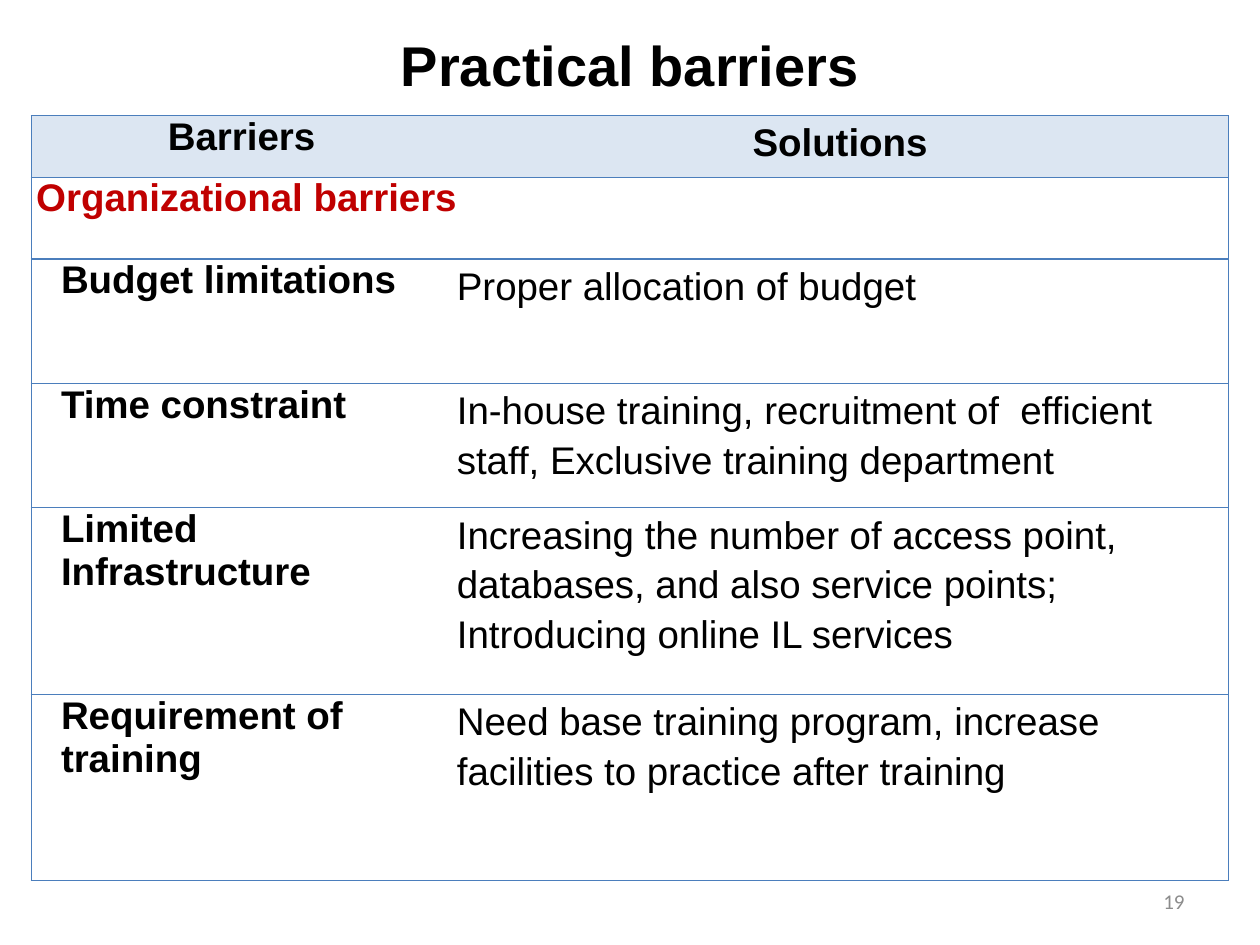
"""Build the slide on practical barriers and their solutions."""
from dataclasses import dataclass

from lxml import etree
from pptx import Presentation
from pptx import util as u
from pptx.dml.color import RGBColor
from pptx.enum import text
from pptx.oxml.ns import qn


@dataclass(frozen=True)
class Theme:
    font: str = "Arial"
    note: str = "Calibri"
    ink: str = "000000"
    red: str = "C00000"
    gray: str = "8C8C8C"
    head: str = "DCE6F2"
    rule: str = "4B7EBC"
    big: int = 32
    body: int = 22
    small: int = 12


T = Theme()
MID = text.PP_ALIGN.CENTER
WIDE = 1.15
COLS = [8.48, 15.65]
HIGH = [1.24, 1.65, 2.51, 2.51, 3.76, 3.76]
PAIRS = [
    ("Budget limitations", "Proper allocation of budget"),
    ("Time constraint",
     "In-house training, recruitment of  efficient staff, "
     "Exclusive training department"),
    ("Limited Infrastructure",
     "Increasing the number of access point, databases, and also "
     "service points; Introducing online IL services"),
    ("Requirement of training",
     "Need base training program, increase facilities to practice "
     "after training"),
]


def write(frame, words, size=T.body, color=T.ink, font=T.font, bold=False,
          align=text.PP_ALIGN.LEFT, space=1.0, indent=0):
    frame.word_wrap = True
    para = frame.paragraphs[0]
    para.alignment = align
    para.line_spacing = space
    para._p.get_or_add_pPr().set("marL", str(u.Cm(indent)))
    run = para.add_run()
    run.text = words
    run.font.size = u.Pt(size)
    run.font.name = font
    run.font.bold = bold
    run.font.color.rgb = RGBColor.from_string(color)


def place(shape, left, top, width, height):
    shape.left, shape.top = u.Cm(left), u.Cm(top)
    shape.width, shape.height = u.Cm(width), u.Cm(height)


def edge(cell, sides):
    props = cell._tc.get_or_add_tcPr()
    for spot, side in enumerate("LRTB"):
        line = etree.Element(qn(f"a:ln{side}"), w=str(u.Pt(0.75)))
        if side in sides:
            fill = etree.SubElement(line, qn("a:solidFill"))
            etree.SubElement(fill, qn("a:srgbClr"), val=T.rule)
        else:
            etree.SubElement(line, qn("a:noFill"))
        props.insert(spot, line)


def dress(cell, sides, fill=None):
    cell.margin_left = cell.margin_right = u.Cm(0.1)
    cell.margin_top = cell.margin_bottom = 0
    if fill:
        cell.fill.solid()
        cell.fill.fore_color.rgb = RGBColor.from_string(fill)
    else:
        cell.fill.background()
    edge(cell, sides)


def add_title(slide, words):
    title = slide.shapes.title
    place(title, 1.27, 0.44, 22.86, 1.7)
    title.text_frame.vertical_anchor = text.MSO_ANCHOR.MIDDLE
    write(title.text_frame, words, size=T.big, bold=True, align=MID)


def add_grid(slide):
    frame = slide.shapes.add_table(
        len(HIGH), len(COLS), u.Cm(0.63), u.Cm(2.33),
        u.Cm(sum(COLS)), u.Cm(sum(HIGH)))
    grid = frame.table
    grid.first_row = grid.horz_banding = False
    for col, width in zip(grid.columns, COLS):
        col.width = u.Cm(width)
    for row, height in zip(grid.rows, HIGH):
        row.height = u.Cm(height)
    for num, row in enumerate(grid.rows):
        for cell, side in zip(row.cells, "LR"):
            dress(cell, "LRTB" if num == 1 else side + "TB",
                  T.head if num == 0 else None)

    def put(row, col, words, **form):
        write(grid.cell(row, col).text_frame, words, **form)

    put(0, 0, "Barriers", bold=True, align=MID)
    put(0, 1, "Solutions", bold=True, align=MID, space=WIDE)
    grid.cell(1, 0).merge(grid.cell(1, 1))
    put(1, 0, "Organizational barriers", bold=True, color=T.red)
    for row, (issue, cure) in enumerate(PAIRS, 2):
        put(row, 0, issue, bold=True, indent=0.5)
        put(row, 1, cure, space=WIDE)


def add_page(slide, words):
    box = slide.shapes.add_textbox(0, 0, 0, 0)
    place(box, 18.2, 17.66, 5.93, 1.01)
    box.text_frame.vertical_anchor = text.MSO_ANCHOR.MIDDLE
    write(box.text_frame, words, size=T.small, color=T.gray, font=T.note,
          align=text.PP_ALIGN.RIGHT)


def main():
    deck = Presentation()
    deck.slide_width, deck.slide_height = u.Cm(25.4), u.Cm(19.05)
    slide = deck.slides.add_slide(deck.slide_layouts[5])
    add_title(slide, "Practical barriers")
    add_grid(slide)
    add_page(slide, "19")
    deck.save("out.pptx")


if __name__ == "__main__":
    main()
